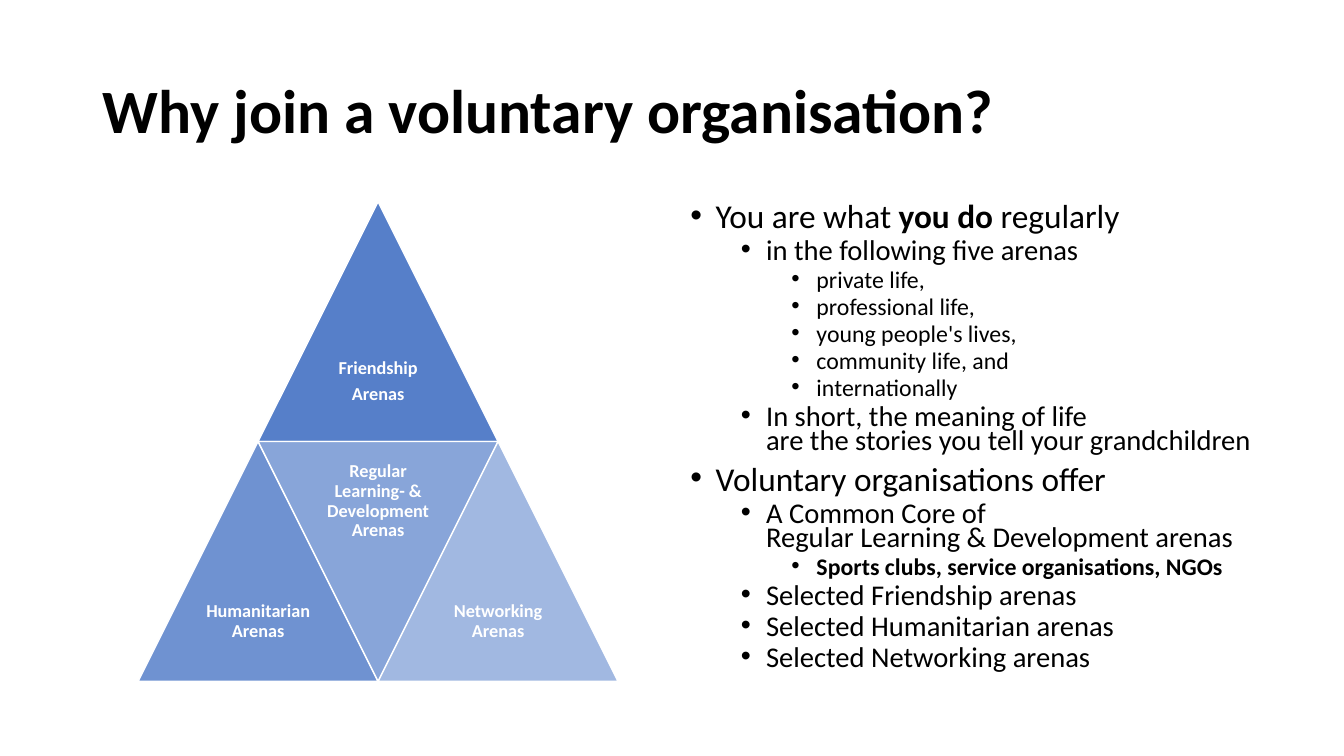
from dataclasses import dataclass

from lxml.etree import SubElement
from pptx import Presentation
from pptx.dml.color import RGBColor
from pptx.enum.shapes import MSO_SHAPE as Shp
from pptx.enum.text import MSO_ANCHOR as Anchor, PP_ALIGN as Align
from pptx.oxml.ns import qn
from pptx.util import Inches, Pt

COLORS = {"text": "000000", "white": "FFFFFF", "blue": "4472C4"}
FONT = "Calibri"
INSETS = ("margin_left", "margin_top", "margin_right", "margin_bottom")

# Pyramid: four triangles of one side length, in half-side steps
SIDE = 2.38
PYRAMID_LEFT, PYRAMID_TOP = 1.37, 2.0


@dataclass
class Arena:
    lines: list[str]
    column: int  # in half sides
    row: int
    opacity: int  # percent
    inverted: bool = False


@dataclass
class Bullet:
    level: int
    text: str  # **bold** parts; a newline is a line break


ARENAS = [
    Arena(["Friendship", "Arenas"], 1, 0, 90),
    Arena(["Humanitarian Arenas"], 0, 1, 77),
    Arena(["Regular Learning- & Development Arenas"], 1, 1, 63, inverted=True),
    Arena(["Networking Arenas"], 2, 1, 50),
]

BULLETS = [
    Bullet(0, "You are what **you do **regularly"),
    Bullet(1, "in the following five arenas"),
    Bullet(2, "private life,"),
    Bullet(2, "professional life,"),
    Bullet(2, "young people's lives,"),
    Bullet(2, "community life, and"),
    Bullet(2, "internationally"),
    Bullet(1, "In short, the meaning of life\nare the stories you tell your grandchildren"),
    Bullet(0, "Voluntary organisations offer"),
    Bullet(1, "A Common Core of\nRegular Learning & Development arenas"),
    Bullet(2, "**Sports clubs, service organisations, NGOs**"),
    Bullet(1, "Selected Friendship arenas"),
    Bullet(1, "Selected Humanitarian arenas"),
    Bullet(1, "Selected Networking arenas"),
]
BULLET_SIZES = (23.8, 20.4, 17)


def rgb(name: str) -> RGBColor:
    return RGBColor.from_string(COLORS[name])


def set_attrs(target, values: dict) -> None:
    for name, value in values.items():
        setattr(target, name, value)


def add_box(s, left: float, top: float, width: float, height: float, **frame):
    """Add a wrapping text box and return its text frame."""
    tf = s.shapes.add_textbox(*map(Inches, (left, top, width, height))).text_frame
    set_attrs(tf, {"word_wrap": True, **frame})
    return tf


def next_paragraph(tf, index: int):
    return tf.paragraphs[0] if index == 0 else tf.add_paragraph()


def add_run(p, text: str, size: float, color: str, bold: bool) -> None:
    r = p.add_run()
    r.text = text
    set_attrs(r.font, {"name": FONT, "size": Pt(size), "bold": bold})
    r.font.color.rgb = rgb(color)


def draw_title(s) -> None:
    tf = add_box(s, 0.92, 0.4, 11.68, 1.45, vertical_anchor=Anchor.MIDDLE)
    p = tf.paragraphs[0]
    p.line_spacing = 0.9
    add_run(p, "Why join a voluntary organisation?", 44, "text", True)


def draw_arena(s, arena: Arena) -> None:
    left = PYRAMID_LEFT + arena.column * SIDE / 2
    top = PYRAMID_TOP + arena.row * SIDE
    triangle = s.shapes.add_shape(
        Shp.ISOSCELES_TRIANGLE, Inches(left), Inches(top), Inches(SIDE), Inches(SIDE))
    triangle.shadow.inherit = False
    triangle.rotation = 180 if arena.inverted else 0
    triangle.fill.solid()
    triangle.fill.fore_color.rgb = rgb("blue")
    fill_color = triangle.fill._xPr.find(qn("a:solidFill"))[0]
    SubElement(fill_color, qn("a:alpha")).set("val", str(arena.opacity * 1000))
    triangle.line.color.rgb = rgb("white")
    triangle.line.width = Pt(1)

    # The label fills the half-size square at the triangle's wide side
    label_top = top if arena.inverted else top + SIDE / 2
    tf = add_box(s, left + SIDE / 4, label_top, SIDE / 2, SIDE / 2,
                 vertical_anchor=Anchor.MIDDLE, **dict.fromkeys(INSETS, Inches(0.05)))
    for i, line in enumerate(arena.lines):
        p = next_paragraph(tf, i)
        set_attrs(p, {"alignment": Align.CENTER, "line_spacing": 0.9, "space_after": Pt(5)})
        add_run(p, line, 13, "white", True)


def set_bullet(p, level: int) -> None:
    p.level = level
    pPr = p._p.get_or_add_pPr()
    pPr.set("marL", str(Inches(0.25 + 0.5 * level)))
    pPr.set("indent", str(Inches(-0.25)))
    SubElement(pPr, qn("a:buFont")).set("typeface", "Arial")
    SubElement(pPr, qn("a:buChar")).set("char", "•")


def draw_bullets(s) -> None:
    tf = add_box(s, 6.75, 2, 6.07, 4.76)
    for i, bullet in enumerate(BULLETS):
        p = next_paragraph(tf, i)
        set_bullet(p, bullet.level)
        p.line_spacing = 0.7
        if i:
            p.space_before = Pt(5 if bullet.level else 10)
        for row, line in enumerate(bullet.text.split("\n")):
            if row:
                p.add_line_break()
            for part, text in enumerate(line.split("**")):
                if text:
                    add_run(p, text, BULLET_SIZES[bullet.level], "text", part % 2 == 1)


def main() -> None:
    prs = Presentation()
    set_attrs(prs, {"slide_width": Inches(13.33), "slide_height": Inches(7.5)})
    s = prs.slides.add_slide(prs.slide_layouts[6])
    draw_title(s)
    for arena in ARENAS:
        draw_arena(s, arena)
    draw_bullets(s)
    prs.save("out.pptx")


if __name__ == "__main__":
    main()
